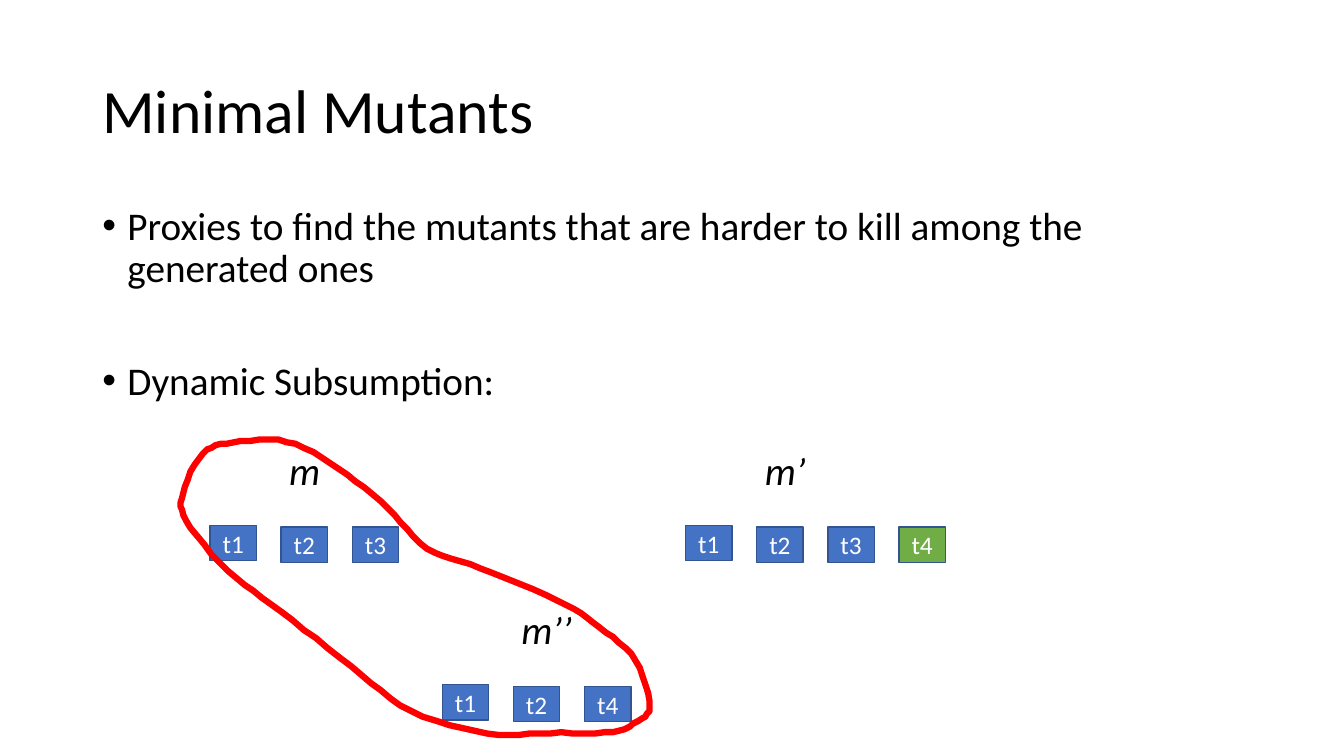
from dataclasses import dataclass
from typing import NamedTuple

from lxml.etree import SubElement
from pptx import Presentation
from pptx.dml.color import RGBColor
from pptx.enum.shapes import MSO_SHAPE
from pptx.enum.text import MSO_ANCHOR as Anchor, MSO_AUTO_SIZE as AutoSize, PP_ALIGN as Align
from pptx.oxml.ns import qn
from pptx.shapes.autoshape import Shape
from pptx.slide import Slide
from pptx.text.text import _Paragraph as Paragraph
from pptx.util import Pt

BLACK = RGBColor(0x00, 0x00, 0x00)
WHITE = RGBColor(0xFF, 0xFF, 0xFF)
BLUE = RGBColor(0x44, 0x72, 0xC4)
DARK_BLUE = RGBColor(0x32, 0x54, 0x91)
GREEN = RGBColor(0x70, 0xAD, 0x47)
RED = RGBColor(0xFF, 0x00, 0x00)

FONT = "Calibri"
TEXT_LEFT, TEXT_WIDTH = 66, 828
TITLE_SIZE, BODY_SIZE, TEST_SIZE = 44, 28, 18
BULLET_INDENT = 18

TEST_WIDTH, TEST_HEIGHT = 33.2, 25.2
TEST_PITCH = 50.8
LABEL_SHIFT, LABEL_RISE = 49.5, 60
LABEL_WIDTH, LABEL_HEIGHT = 62, 41.2

CURVE_STEPS = 6


class Point(NamedTuple):
    x: float
    y: float


@dataclass(frozen=True)
class Mutant:
    """A mutant with the tests that kill it; left and top place its first test."""
    name: str
    left: float
    top: float
    tests: tuple[str, ...]
    extra_test: str = ""


MUTANTS = [
    Mutant("m", 150, 375.3, ("t1", "t2", "t3")),
    Mutant("m’", 489.7, 375.3, ("t1", "t2", "t3", "t4"), extra_test="t4"),
    Mutant("m’’", 315.9, 489, ("t1", "t2", "t4")),
]

# The loop around m and m’’ is a smooth curve through these points, clockwise.
AROUND_M = [Point(133, 372), Point(131, 352), Point(145, 324), Point(167, 316), Point(205, 315.5)]
DOWN_TO_M2 = [Point(242, 335), Point(277, 363), Point(305, 392), Point(343, 406), Point(398, 429)]
AROUND_M2 = [Point(428, 448), Point(454, 472), Point(464, 505), Point(454, 516), Point(438, 523)]
BELOW_M2 = [Point(393, 523.5), Point(348, 524), Point(294, 508)]
BACK_TO_M = [Point(251, 476), Point(201, 437), Point(163, 408)]
LOOP = AROUND_M + DOWN_TO_M2 + AROUND_M2 + BELOW_M2 + BACK_TO_M


def style_text(paragraph: Paragraph, size: float, color: RGBColor, italic: bool = False) -> None:
    for run in paragraph.runs:
        run.font.name = FONT
        run.font.size = Pt(size)
        run.font.color.rgb = color
        run.font.italic = italic


def add_text_box(slide: Slide, left: float, top: float, width: float, height: float) -> Shape:
    box = slide.shapes.add_textbox(Pt(left), Pt(top), Pt(width), Pt(height))
    box.text_frame.word_wrap = True
    return box


def add_title(slide: Slide) -> None:
    frame = add_text_box(slide, TEXT_LEFT, 28.75, TEXT_WIDTH, 104.4).text_frame
    frame.vertical_anchor = Anchor.MIDDLE
    frame.text = "Minimal Mutants"
    heading = frame.paragraphs[0]
    heading.line_spacing = 0.9
    style_text(heading, TITLE_SIZE, BLACK)


def add_bullet(paragraph: Paragraph, text: str, space_before: float) -> None:
    paragraph.text = text
    paragraph.line_spacing = 0.9
    paragraph.space_before = Pt(space_before)
    style_text(paragraph, BODY_SIZE, BLACK)
    properties = paragraph._p.get_or_add_pPr()
    properties.set("marL", str(Pt(BULLET_INDENT)))
    properties.set("indent", str(Pt(-BULLET_INDENT)))
    SubElement(properties, qn("a:buFont"), typeface="Arial")
    SubElement(properties, qn("a:buChar"), char="•")


def add_bullets(slide: Slide) -> None:
    frame = add_text_box(slide, TEXT_LEFT, 143.75, TEXT_WIDTH, 342.6).text_frame
    add_bullet(
        frame.paragraphs[0],
        "Proxies to find the mutants that are harder to kill among the generated ones",
        10,
    )
    add_bullet(frame.add_paragraph(), "Dynamic Subsumption:", 50.5)


def add_test(slide: Slide, name: str, left: float, top: float, fill: RGBColor) -> None:
    test = slide.shapes.add_shape(
        MSO_SHAPE.RECTANGLE, Pt(left), Pt(top), Pt(TEST_WIDTH), Pt(TEST_HEIGHT)
    )
    test.shadow.inherit = False
    test.fill.solid()
    test.fill.fore_color.rgb = fill
    test.line.color.rgb = DARK_BLUE
    test.line.width = Pt(1)
    frame = test.text_frame
    frame.margin_left = frame.margin_right = frame.margin_top = frame.margin_bottom = Pt(0)
    frame.vertical_anchor = Anchor.MIDDLE
    frame.text = name
    frame.paragraphs[0].alignment = Align.CENTER
    style_text(frame.paragraphs[0], TEST_SIZE, WHITE)


def add_mutant(slide: Slide, mutant: Mutant) -> None:
    """Draw the row of tests, the first slightly higher, and the name above it."""
    for column, name in enumerate(mutant.tests):
        fill = GREEN if name == mutant.extra_test else BLUE
        drop = 1.2 if column else 0
        add_test(slide, name, mutant.left + column * TEST_PITCH, mutant.top + drop, fill)
    frame = add_text_box(
        slide, mutant.left + LABEL_SHIFT, mutant.top - LABEL_RISE, LABEL_WIDTH, LABEL_HEIGHT
    ).text_frame
    frame.auto_size = AutoSize.SHAPE_TO_FIT_TEXT
    frame.text = mutant.name
    style_text(frame.paragraphs[0], BODY_SIZE, BLACK, italic=True)


def spline(before: float, start: float, end: float, after: float, t: float) -> float:
    """Catmull-Rom value between start (t = 0) and end (t = 1)."""
    linear = end - before
    square = 2 * before - 5 * start + 4 * end - after
    cube = 3 * (start - end) + after - before
    return start + (linear * t + square * t**2 + cube * t**3) / 2


def smooth_loop(anchors: list[Point]) -> list[Point]:
    """Closed curve through all anchors, sampled in CURVE_STEPS per stretch."""
    count = len(anchors)
    curve = []
    for index in range(count):
        stretch = [anchors[(index + shift) % count] for shift in (-1, 0, 1, 2)]
        xs, ys = zip(*stretch)
        for step in range(CURVE_STEPS):
            t = step / CURVE_STEPS
            curve.append(Point(spline(*xs, t), spline(*ys, t)))
    return curve


def add_loop(slide: Slide) -> None:
    start, *rest = smooth_loop(LOOP)
    builder = slide.shapes.build_freeform(start.x, start.y, scale=Pt(1))
    builder.add_line_segments(rest, close=True)
    loop = builder.convert_to_shape()
    loop.shadow.inherit = False
    loop.fill.background()
    loop.line.color.rgb = RED
    loop.line.width = Pt(4.5)
    SubElement(loop.line._get_or_add_ln(), qn("a:round"))


def main() -> None:
    deck = Presentation()
    deck.slide_width, deck.slide_height = Pt(960), Pt(540)
    slide = deck.slides.add_slide(deck.slide_layouts[6])
    add_title(slide)
    add_bullets(slide)
    for mutant in MUTANTS:
        add_mutant(slide, mutant)
    add_loop(slide)
    deck.save("out.pptx")


if __name__ == "__main__":
    main()
